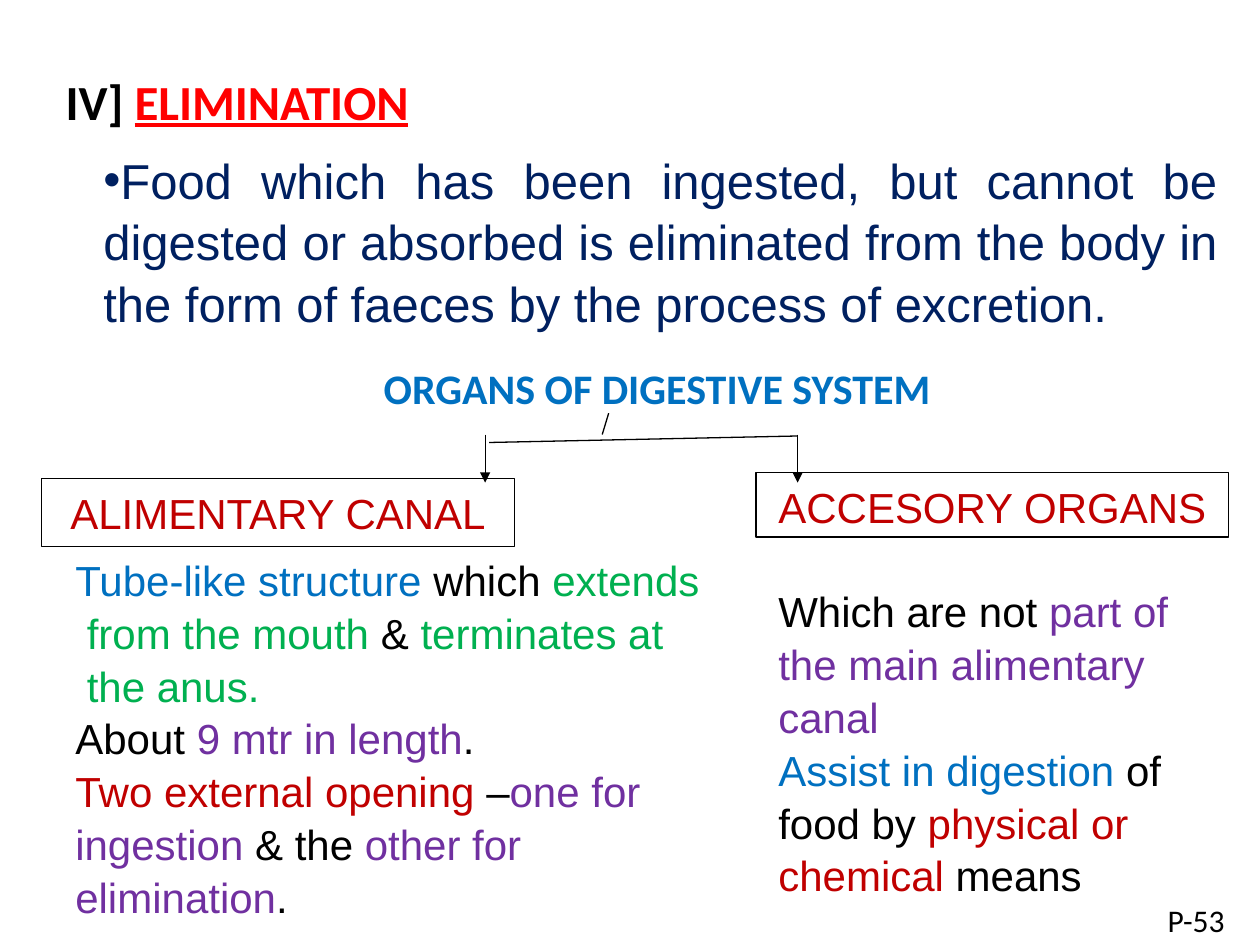
from lxml.etree import SubElement
from pptx import Presentation
from pptx.dml.color import RGBColor
from pptx.enum.shapes import MSO_CONNECTOR, MSO_SHAPE
from pptx.enum.text import MSO_ANCHOR, MSO_AUTO_SIZE, PP_ALIGN
from pptx.oxml.ns import qn
from pptx.util import Cm, Pt

BLACK, WHITE, RED, NAVY = "000000", "FFFFFF", "FF0000", "002060"
BLUE, GREEN, PURPLE, CRIMSON = "0070C0", "00B050", "7030A0", "C00000"
ARIAL_SPACING = 1.05


def color(code):
    return RGBColor.from_string(code)


def cm_box(box):
    return [Cm(value) for value in box]


def place(shape, box):
    shape.left, shape.top, shape.width, shape.height = cm_box(box)


def fill_white(shape):
    shape.fill.solid()
    shape.fill.fore_color.rgb = color(WHITE)


def set_frame(frame, wrap=True, anchor=MSO_ANCHOR.TOP):
    frame.word_wrap = wrap
    frame.auto_size = MSO_AUTO_SIZE.NONE
    frame.vertical_anchor = anchor


def write(para, spans, size, font="Arial", bold=False, align=PP_ALIGN.LEFT):
    """Fill a paragraph with (text, colour) spans in one font."""
    para.alignment = align
    para.space_before = Pt(0)
    para.line_spacing = ARIAL_SPACING if font == "Arial" else 1.0
    for text, code in spans:
        span = para.add_run()
        span.text = text
        span.font.name = font
        span.font.size = Pt(size)
        span.font.bold = bold
        span.font.color.rgb = color(code)


def set_indent(para, margin):
    properties = para._p.get_or_add_pPr()
    properties.set("marL", str(Cm(margin)))
    properties.set("indent", "0")
    return properties


def add_text(page, box, spans, size, wrap=True, **style):
    frame = page.shapes.add_textbox(*cm_box(box)).text_frame
    set_frame(frame, wrap)
    write(frame.paragraphs[0], spans, size, **style)


def add_title(page, box):
    title = page.shapes.title
    place(title, box)
    fill_white(title)
    set_frame(title.text_frame, wrap=False, anchor=MSO_ANCHOR.MIDDLE)
    para = title.text_frame.paragraphs[0]
    write(para, [("IV] ", BLACK), ("ELIMINATION", RED)], 28, "Calibri", bold=True)
    para.runs[1].font.underline = True


def add_definition(page, box):
    body = page.placeholders[1]
    place(body, box)
    set_frame(body.text_frame)
    para = body.text_frame.paragraphs[0]
    text = ("Food which has been ingested, but cannot be digested or absorbed is "
            "eliminated from the body in the form of faeces by the process of excretion.")
    write(para, [(text, NAVY)], 28, align=PP_ALIGN.JUSTIFY)
    SubElement(set_indent(para, 0), qn("a:buChar")).set("char", "•")


def add_line(page, start, end, arrow=False):
    line = page.shapes.add_connector(MSO_CONNECTOR.STRAIGHT, *cm_box(start + end))
    line.line.color.rgb = color(BLACK)
    line.line.width = Pt(0.75)
    if arrow:
        SubElement(line.line._get_or_add_ln(), qn("a:tailEnd")).set("type", "triangle")
    SubElement(line._element.spPr, qn("a:effectLst"))


def add_branches(page, box):
    left, top, width, height = box
    right, bar = left + width, top + 0.43
    add_line(page, (left + 2.49, top), (left + 2.36, bar))          # stem
    add_line(page, (left + 0.08, bar + 0.16), (right, bar + 0.03))  # crossbar
    for x in (left, right):
        add_line(page, (x, bar), (x, top + height), arrow=True)


def add_column(page, box, label, text_offset, text_size, paragraphs):
    """Draw a framed label with its description below; box is the label."""
    frame_box = page.shapes.add_shape(MSO_SHAPE.RECTANGLE, *cm_box(box))
    frame_box.shadow.inherit = False
    fill_white(frame_box)
    frame_box.line.color.rgb = color(BLACK)
    frame_box.line.width = Pt(0.75)
    set_frame(frame_box.text_frame)
    write(frame_box.text_frame.paragraphs[0], [(label, CRIMSON)], 24,
          align=PP_ALIGN.CENTER)

    # Description
    text_box = (box[0] + text_offset[0], box[1] + text_offset[1], *text_size)
    frame = page.shapes.add_textbox(*cm_box(text_box)).text_frame
    set_frame(frame)
    for index, (margin, spans) in enumerate(paragraphs):
        para = frame.add_paragraph() if index else frame.paragraphs[0]
        set_indent(para, margin)
        write(para, spans, 24)


def main():
    deck = Presentation()
    deck.slide_width, deck.slide_height = Cm(25.4), Cm(19.05)
    page = deck.slides.add_slide(deck.slide_layouts[1])

    add_title(page, (1.07, 1.3, 7.52, 1.45))
    add_definition(page, (1.83, 2.84, 22.96, 3.71))

    # Organs: heading, two columns and the branches between them
    add_text(page, (6.35, 7.19, 13.79, 1.27), [("ORGANS OF DIGESTIVE SYSTEM", BLUE)],
             24, font="Calibri", bold=True, align=PP_ALIGN.CENTER)
    add_column(page, (0.84, 9.65, 9.53, 1.37), "ALIMENTARY CANAL",
               (0.43, 1.35), (13.54, 7.44), [
        (0, [("Tube-like structure ", BLUE), ("which ", BLACK), ("extends", GREEN)]),
        (0.23, [("from the mouth", GREEN), (" & ", BLACK), ("terminates at", GREEN)]),
        (0.23, [("the anus.", GREEN)]),
        (0, [("About ", BLACK), ("9 mtr in length", PURPLE), (".", BLACK)]),
        (0, [("Two external opening ", CRIMSON), ("–", BLACK),
             ("one for ingestion", PURPLE), (" & the ", BLACK),
             ("other for elimination", PURPLE), (".", BLACK)]),
    ])
    add_column(page, (15.24, 9.53, 9.53, 1.3), "ACCESORY ORGANS",
               (0.2, 2.1), (9.53, 6.4), [
        (0, [("Which are not ", BLACK), ("part of the main alimentary canal", PURPLE)]),
        (0, [("Assist in digestion ", BLUE), ("of food by ", BLACK),
             ("physical or chemical ", CRIMSON), ("means", BLACK)]),
    ])
    add_branches(page, (9.78, 8.33, 6.3, 1.4))

    # Page number
    add_text(page, (23.29, 18.03, 1.68, 1.02), [("P-53", BLACK)], 18,
             wrap=False, font="Calibri")
    deck.save("out.pptx")


if __name__ == "__main__":
    main()
